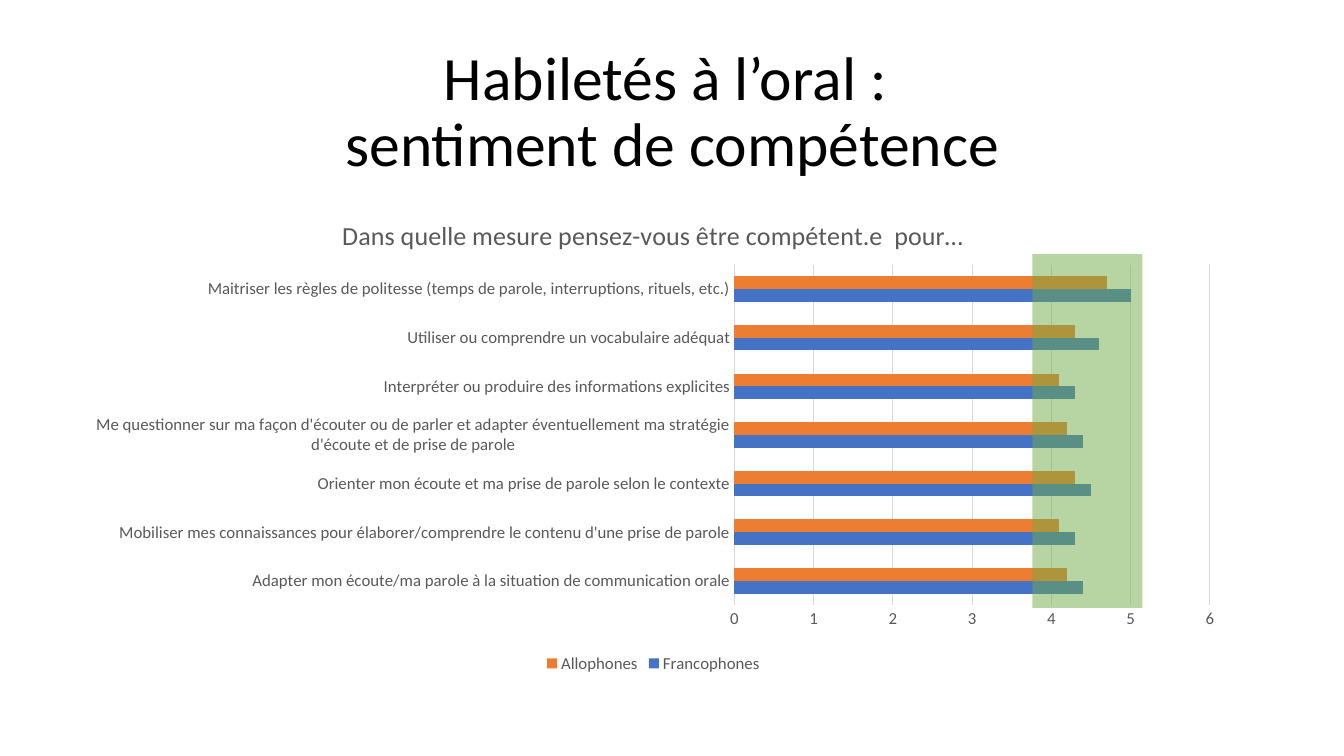
from dataclasses import dataclass

from lxml.etree import SubElement
from pptx import Presentation
from pptx.chart.data import CategoryChartData
from pptx.dml.color import RGBColor
from pptx.enum.chart import XL_CHART_TYPE, XL_LEGEND_POSITION, XL_TICK_MARK
from pptx.enum.shapes import MSO_SHAPE
from pptx.enum.text import MSO_ANCHOR, PP_ALIGN
from pptx.oxml import parse_xml
from pptx.oxml.ns import nsdecls, qn
from pptx.util import Inches, Pt


@dataclass(frozen=True)
class Theme:
    font: str = "Calibri"
    title_size: float = 44
    chart_title_size: float = 18.6
    label_size: float = 12
    black: RGBColor = RGBColor(0x00, 0x00, 0x00)
    gray: RGBColor = RGBColor(0x59, 0x59, 0x59)
    grid: RGBColor = RGBColor(0xD9, 0xD9, 0xD9)
    blue: RGBColor = RGBColor(0x44, 0x72, 0xC4)
    orange: RGBColor = RGBColor(0xED, 0x7D, 0x31)
    green: RGBColor = RGBColor(0x70, 0xAD, 0x47)


theme = Theme()


def style_font(font, size, color):
    font.name = theme.font
    font.size = Pt(size)
    font.bold = False
    font.color.rgb = color


presentation = Presentation()
presentation.slide_width = Inches(13.33)
presentation.slide_height = Inches(7.5)
slide = presentation.slides.add_slide(presentation.slide_layouts[6])

# Slide title
title_box = slide.shapes.add_textbox(Inches(0.92), Inches(0.4), Inches(11.5), Inches(1.45))
title_frame = title_box.text_frame
title_frame.word_wrap = True
title_frame.vertical_anchor = MSO_ANCHOR.MIDDLE
paragraph = title_frame.paragraphs[0]
paragraph.alignment = PP_ALIGN.CENTER
paragraph.line_spacing = 0.9
first_run = paragraph.add_run()
first_run.text = "Habiletés à l’oral : "
paragraph.add_line_break()
second_run = paragraph.add_run()
second_run.text = "sentiment de compétence"
for run in (first_run, second_run):
    style_font(run.font, theme.title_size, theme.black)

# Bar chart
skills = [
    # skill, Francophones, Allophones
    ("Adapter mon écoute/ma parole à la situation de communication orale", 4.4, 4.2),
    ("Mobiliser mes connaissances pour élaborer/comprendre le contenu d'une prise de parole", 4.3, 4.1),
    ("Orienter mon écoute et ma prise de parole selon le contexte", 4.5, 4.3),
    ("Me questionner sur ma façon d'écouter ou de parler et adapter éventuellement "
     "ma stratégie d'écoute et de prise de parole", 4.4, 4.2),
    ("Interpréter ou produire des informations explicites", 4.3, 4.1),
    ("Utiliser ou comprendre un vocabulaire adéquat", 4.6, 4.3),
    ("Maitriser les règles de politesse (temps de parole, interruptions, rituels, etc.)", 5, 4.7),
]
labels, francophones, allophones = zip(*skills)
chart_data = CategoryChartData()
chart_data.categories = labels
chart_data.add_series("Francophones", francophones)
chart_data.add_series("Allophones", allophones)
chart = slide.shapes.add_chart(
    XL_CHART_TYPE.BAR_CLUSTERED,
    Inches(0.73), Inches(1.96), Inches(11.5), Inches(4.76), chart_data,
).chart
style_font(chart.font, theme.label_size, theme.gray)

chart.has_title = True
run = chart.chart_title.text_frame.paragraphs[0].add_run()
run.text = "Dans quelle mesure pensez-vous être compétent.e  pour…"
style_font(run.font, theme.chart_title_size, theme.gray)
chart.chart_title.include_in_layout = False

chart.has_legend = True
chart.legend.position = XL_LEGEND_POSITION.BOTTOM
chart.legend.include_in_layout = False
style_font(chart.legend.font, theme.label_size, theme.gray)

plot = chart.plots[0]
plot.gap_width = 182
plot.overlap = 0
plot.vary_by_categories = False
for series, color in zip(plot.series, (theme.blue, theme.orange)):
    series.format.fill.solid()
    series.format.fill.fore_color.rgb = color

for axis in (chart.category_axis, chart.value_axis):
    axis.major_tick_mark = XL_TICK_MARK.NONE
    axis.minor_tick_mark = XL_TICK_MARK.NONE
    style_font(axis.tick_labels.font, theme.label_size, theme.gray)
chart.value_axis.minimum_scale = 0
chart.value_axis.maximum_scale = 6
chart.value_axis.major_unit = 1
chart.value_axis.tick_labels.number_format = "General"
chart.value_axis.tick_labels.number_format_is_linked = False
chart.value_axis.format.line.fill.background()
for line in (chart.category_axis.format.line, chart.value_axis.major_gridlines.format.line):
    line.color.rgb = theme.grid
    line.width = Pt(0.75)

# Fixed plot area, as fractions of the chart frame
plot_area = chart.element.find(".//" + qn("c:plotArea"))
for automatic_layout in plot_area.findall(qn("c:layout")):
    plot_area.remove(automatic_layout)
plot_area.insert(0, parse_xml(
    f'<c:layout {nsdecls("c")}><c:manualLayout><c:layoutTarget val="inner"/>'
    '<c:xMode val="edge"/><c:yMode val="edge"/>'
    '<c:x val="0.57"/><c:y val="0.14"/><c:w val="0.41"/><c:h val="0.71"/>'
    '</c:manualLayout></c:layout>'
))

# Translucent band over the highest scores
score_band = slide.shapes.add_shape(
    MSO_SHAPE.RECTANGLE, Inches(10.24), Inches(2.52), Inches(1.09), Inches(3.51))
score_band.shadow.inherit = False
score_band.line.fill.background()
score_band.fill.solid()
score_band.fill.fore_color.rgb = theme.green
band_color = score_band.element.spPr.find(qn("a:solidFill")).find(qn("a:srgbClr"))
SubElement(band_color, qn("a:alpha")).set("val", "50000")

presentation.save("out.pptx")
